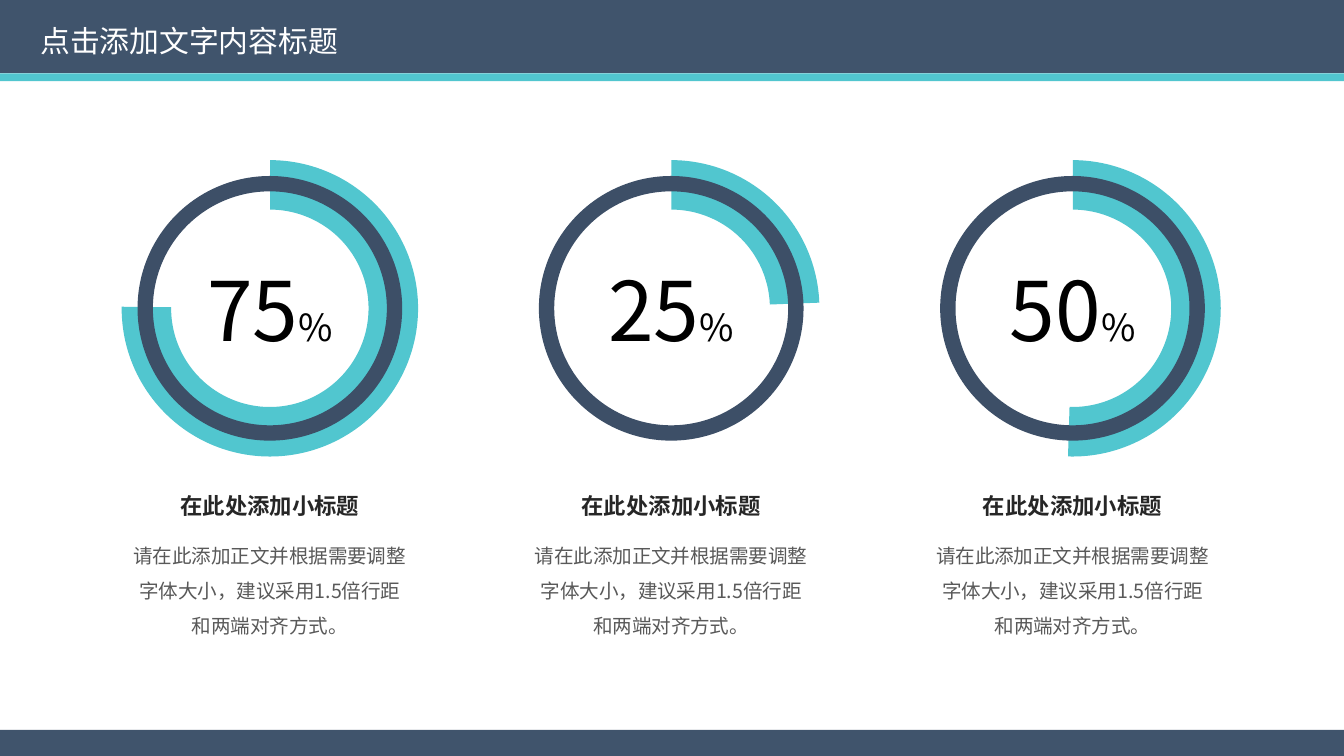
import pptx
import pptx.dml.color
import pptx.enum.shapes
import pptx.enum.text
import pptx.oxml
import pptx.oxml.ns
import pptx.util

Pt = pptx.util.Pt
RGB = pptx.dml.color.RGBColor
SHAPE = pptx.enum.shapes.MSO_SHAPE
ALIGN = pptx.enum.text.PP_ALIGN
NAVY = RGB(0x40, 0x54, 0x6C)
RING = RGB(0x3D, 0x4F, 0x67)
TEAL = RGB(0x51, 0xC6, 0xCF)
BLACK = RGB(0, 0, 0)
DARK = RGB(0x26, 0x26, 0x26)
GRAY = RGB(0x59, 0x59, 0x59)
WHITE = RGB(0xFF, 0xFF, 0xFF)
FACE = "Noto Sans CJK SC"


def draw(shapes, kind, left, top, width, height, color):
    shape = shapes.add_shape(kind, Pt(left), Pt(top), Pt(width), Pt(height))
    shape.shadow.inherit = False
    shape.fill.solid()
    shape.fill.fore_color.rgb = color
    shape.line.fill.background()
    return shape


def write(box, parts, color, align=ALIGN.CENTER, wrap=True, bold=False):
    frame = box.text_frame
    frame.word_wrap = wrap
    frame.auto_size = pptx.enum.text.MSO_AUTO_SIZE.SHAPE_TO_FIT_TEXT
    frame.vertical_anchor = pptx.enum.text.MSO_ANCHOR.TOP
    line = frame.paragraphs[0]
    line.alignment = align
    line.font.size = Pt(parts[0][1])
    line.font.bold = bold
    line.font.color.rgb = color
    line.font.name = FACE
    east = pptx.oxml.parse_xml(f'<a:ea {pptx.oxml.ns.nsdecls("a")} typeface="{FACE}"/>')
    line.font._element.append(east)
    for text, size in parts:
        run = line.add_run()
        run.text = text
        if size != parts[0][1]:
            run.font.size = Pt(size)
    return line


deck = pptx.Presentation()
deck.slide_width = Pt(720)
deck.slide_height = Pt(405)
slide = deck.slides.add_slide(deck.slide_layouts[5])
shapes = slide.shapes

for top, height, color in ((0, 39.3, NAVY), (39.3, 4.2, TEAL), (391, 14, NAVY)):
    draw(shapes, SHAPE.RECTANGLE, 0, top, 720, height, color)

for col, (value, end) in enumerate((("75", 180.62), ("25", 357.81), ("50", 91.75))):
    mid = 144.6 + 215 * col

    dial = shapes.add_group_shape().shapes
    arc = draw(dial, SHAPE.BLOCK_ARC, mid - 79.4, 85.8, 158.8, 158.8, TEAL)
    for slot, adjust in enumerate((270.11 * 0.6, end * 0.6, 0.167)):
        arc.adjustments[slot] = adjust
    ring = draw(dial, SHAPE.DONUT, mid - 70.9, 94.3, 141.8, 141.8, RING)
    ring.adjustments[0] = 0.058
    box = dial.add_textbox(Pt(mid - 42), Pt(135.4), Pt(84), Pt(60.5))
    write(box, [(value, 44), ("%", 20)], BLACK, wrap=False)

    note = shapes.add_group_shape().shapes
    head = note.add_textbox(Pt(mid - 70), Pt(260), Pt(140), Pt(21.8))
    write(head, [("在此处添加小标题", 12)], DARK, bold=True)
    body = note.add_textbox(Pt(mid - 73.5), Pt(281.5), Pt(147), Pt(65))
    body.text_frame.margin_left = body.text_frame.margin_right = 0
    words = "请在此添加正文并根据需要调整字体大小，建议采用1.5倍行距和两端对齐方式。"
    write(body, [(words, 10.5)], GRAY).line_spacing = 1.5

title = shapes.title
title.left, title.top, title.width, title.height = Pt(14.4), Pt(8.6), Pt(176.4), Pt(26.6)
write(title, [("点击添加文字内容标题", 16)], WHITE, ALIGN.LEFT, wrap=False)
shapes._spTree.append(title._element)

deck.save("out.pptx")
